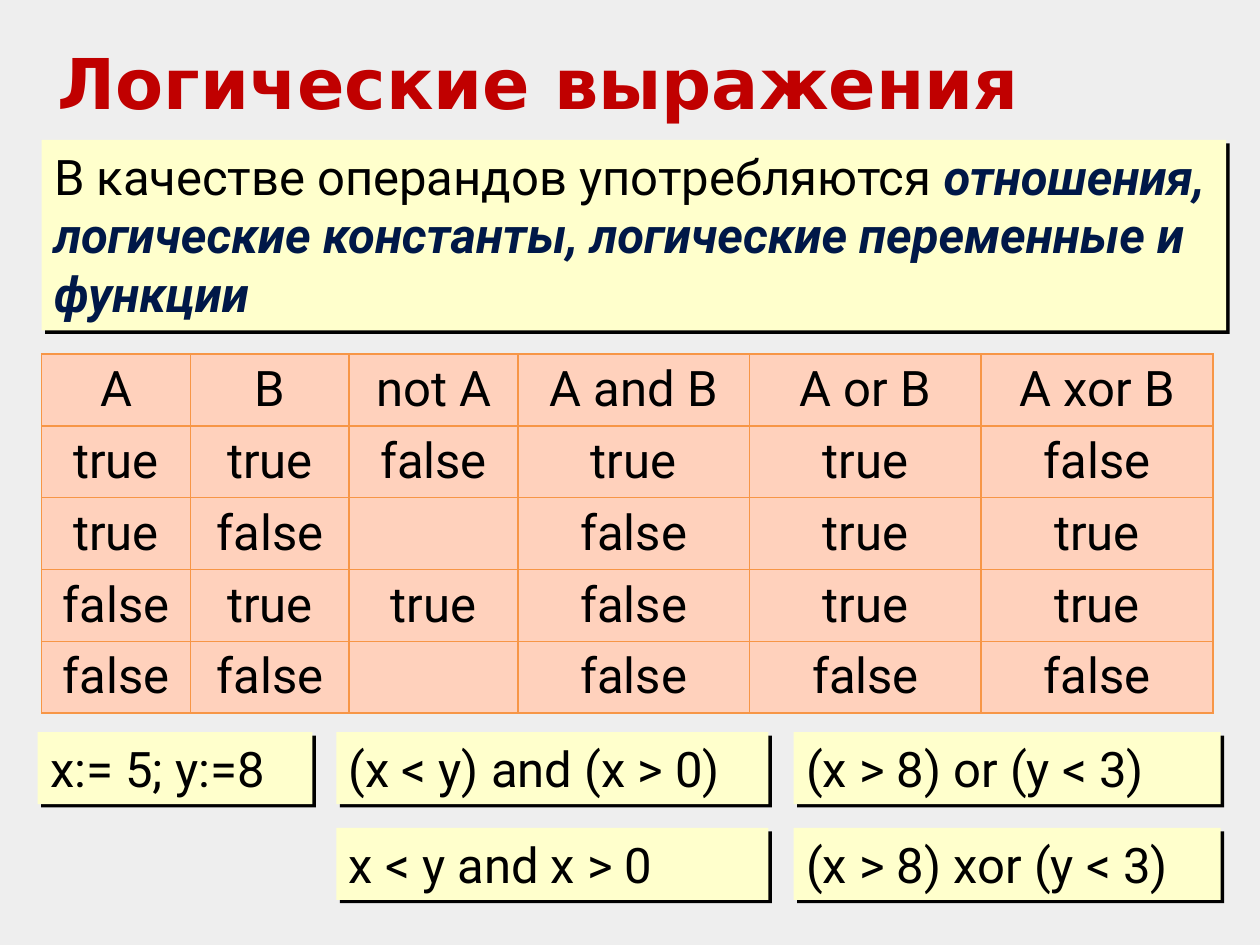
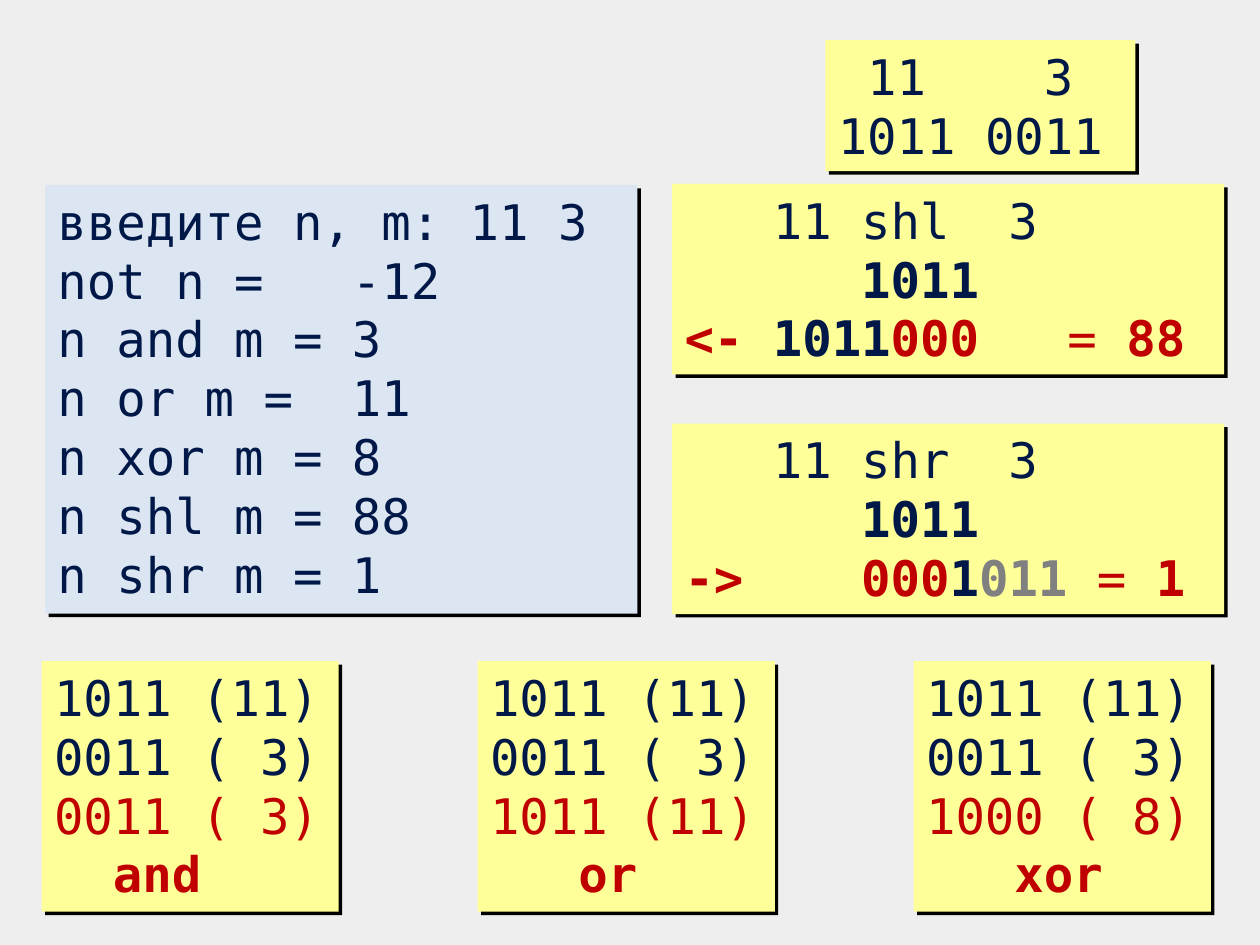
import dataclasses

import pptx
import pptx.dml.color
import pptx.enum.shapes
import pptx.enum.text
import pptx.oxml
import pptx.oxml.ns
import pptx.util

Cm = pptx.util.Cm
Pt = pptx.util.Pt
ALIGN = pptx.enum.text.PP_ALIGN
ANCHOR = pptx.enum.text.MSO_ANCHOR


@dataclasses.dataclass(frozen=True)
class Theme:
    back: str = "EEEEEE"
    cream: str = "FFFFCC"
    yellow: str = "FFFF99"
    blue: str = "DCE6F2"
    peach: str = "FFD1BC"
    grid: str = "F79646"
    black: str = "000000"
    navy: str = "001848"
    red: str = "C00000"
    gray: str = "808080"
    body: str = "Roboto"
    code: str = "DejaVu Sans Mono"
    head: str = "DejaVu Sans"
    text_size: int = 28
    head_size: int = 40


T = Theme()

# Looks of text: colour, bold, italic
PLAIN = (T.black, False, False)
TERM = (T.navy, True, True)
INK = (T.navy, False, False)
BOLD = (T.navy, True, False)
RED = (T.red, False, False)
MARK = (T.red, True, False)
LOST = (T.gray, True, False)

# ---- Content: a line is a list of (text, look) runs ----
TITLE = "Логические выражения"
RULE = [[("В качестве операндов употребляются ", PLAIN),
         ("отношения, логические константы, логические переменные и функции", TERM)]]
TRUTH = [
    ("A", "B", "not A", "A and B", "A or B", "A xor B"),
    ("true", "true", "false", "true", "true", "false"),
    ("true", "false", "", "false", "true", "true"),
    ("false", "true", "true", "false", "true", "true"),
    ("false", "false", "", "false", "false", "false"),
]
WIDTHS = (3.0, 3.2, 3.4, 4.67, 4.67, 4.67)

# Samples: column, row, text
SAMPLES = [
    (0, 0, "x:= 5; y:=8"),
    (1, 0, "(x < y) and (x > 0)"),
    (2, 0, "(x > 8) or (y < 3)"),
    (1, 1, "x < y and x > 0"),
    (2, 1, "(x > 8) xor (y < 3)"),
]
COLUMNS = [(0.76, 5.54), (6.78, 8.71), (16.0, 8.61)]  # left, width

OUTPUT = [[(line, INK)] for line in (
    "введите n, m: 11 3",
    "not n =   -12",
    "n and m = 3",
    "n or m =  11",
    "n xor m = 8",
    "n shl m = 88",
    "n shr m = 1",
)]
INPUT = [[(" 11    3", INK)], [("1011 0011", INK)]]
SHIFTS = [
    [[("   11 shl  3", INK)],
     [("      1011", BOLD)],
     [("<- ", MARK), ("1011", BOLD), ("000   ", MARK), ("= ", RED), ("88", MARK)]],
    [[("   11 shr  3", INK)],
     [("      1011", BOLD)],
     [("->    000", MARK), ("1", BOLD), ("011 ", LOST), ("= ", RED), ("1", MARK)]],
]
BITWISE = [("0011 ( 3)", "  and"), ("1011 (11)", "   or"), ("1000 ( 8)", "   xor")]


# ---- Drawing ----
def rgb(code):
    return pptx.dml.color.RGBColor.from_string(code)


def style(font, look, face, size=T.text_size):
    color, font.bold, font.italic = look
    font.color.rgb = rgb(color)
    font.name, font.size = face, Pt(size)


def write(frame, lines, face):
    for num, line in enumerate(lines):
        para = frame.paragraphs[0] if num == 0 else frame.add_paragraph()
        para.alignment = ALIGN.LEFT
        style(para.font, line[0][1], face)
        for text, look in line:
            run = para.add_run()
            run.text = text
            if len(line) > 1:
                style(run.font, look, face)


def cast(shape):
    """Give the shape a hard black shadow down and to the right."""
    shape.shadow.inherit = False
    effects = shape._element.spPr.find(pptx.oxml.ns.qn("a:effectLst"))
    effects.append(pptx.oxml.parse_xml(
        f'<a:outerShdw {pptx.oxml.ns.nsdecls("a")} dist="{Pt(2.8)}" dir="2700000" '
        f'algn="ctr" rotWithShape="0"><a:srgbClr val="{T.black}"/></a:outerShdw>'))


def panel(slide, left, top, width, height, fill, lines, face=T.code):
    box = slide.shapes.add_shape(pptx.enum.shapes.MSO_SHAPE.RECTANGLE,
                                 Cm(left), Cm(top), Cm(width), Cm(height))
    box.fill.solid()
    box.fill.fore_color.rgb = rgb(fill)
    box.line.fill.background()
    cast(box)
    frame = box.text_frame
    frame.word_wrap = True
    frame.auto_size = pptx.enum.text.MSO_AUTO_SIZE.SHAPE_TO_FIT_TEXT
    frame.vertical_anchor = ANCHOR.TOP
    write(frame, lines, face)


def border(cell):
    props = cell._tc.get_or_add_tcPr()
    for num, side in enumerate(("lnL", "lnR", "lnT", "lnB")):
        props.insert(num, pptx.oxml.parse_xml(
            f'<a:{side} {pptx.oxml.ns.nsdecls("a")} w="{Pt(1)}"><a:solidFill>'
            f'<a:srgbClr val="{T.grid}"/></a:solidFill></a:{side}>'))


def grid(slide, left, top, rows, widths, height):
    table = slide.shapes.add_table(len(rows), len(widths), Cm(left), Cm(top),
                                   Cm(sum(widths)), Cm(height * len(rows))).table
    table.first_row = table.horz_banding = False
    for col, width in zip(table.columns, widths):
        col.width = Cm(width)
    for row, texts in zip(table.rows, rows):
        row.height = Cm(height)
        for cell, text in zip(row.cells, texts):
            cell.text = text
            cell.vertical_anchor = ANCHOR.MIDDLE
            cell.margin_left = cell.margin_right = Cm(0.13)
            cell.margin_top = cell.margin_bottom = Cm(0.13)
            cell.fill.solid()
            cell.fill.fore_color.rgb = rgb(T.peach)
            border(cell)
            para = cell.text_frame.paragraphs[0]
            para.alignment = ALIGN.CENTER
            style(para.font, PLAIN, T.body)


def head(slide, text):
    title = slide.shapes.title
    title.left, title.top = Cm(0.91), Cm(0.53)
    title.width, title.height = Cm(23.57), Cm(2.21)
    frame = title.text_frame
    frame.text = text
    frame.vertical_anchor = ANCHOR.MIDDLE
    para = frame.paragraphs[0]
    para.alignment = ALIGN.LEFT
    style(para.font, MARK, T.head, T.head_size)


def logic(slide):
    head(slide, TITLE)
    panel(slide, 0.84, 2.82, 23.88, 3.84, T.cream, RULE, T.body)
    grid(slide, 0.84, 7.14, TRUTH, WIDTHS, 1.44)
    for col, row, text in SAMPLES:
        left, width = COLUMNS[col]
        panel(slide, left, 14.76 + 1.93 * row, width, 1.45, T.cream,
              [[(text, PLAIN)]], T.body)


def bits(slide):
    panel(slide, 0.91, 3.73, 11.94, 8.64, T.blue, OUTPUT)
    panel(slide, 16.64, 0.81, 6.25, 2.64, T.yellow, INPUT)
    for num, lines in enumerate(SHIFTS):
        panel(slide, 13.55, 3.71 + 4.83 * num, 11.13, 3.84, T.yellow, lines)
    for num, (result, name) in enumerate(BITWISE):
        lines = [[("1011 (11)", INK)], [("0011 ( 3)", INK)],
                 [(result, RED)], [(name, MARK)]]
        panel(slide, 0.84 + 8.79 * num, 13.33, 5.99, 5.05, T.yellow, lines)


def main():
    deck = pptx.Presentation()
    deck.slide_width, deck.slide_height = Cm(25.4), Cm(19.05)
    back = deck.slide_master.background.fill
    back.solid()
    back.fore_color.rgb = rgb(T.back)
    only_title, blank = deck.slide_layouts[5], deck.slide_layouts[6]
    logic(deck.slides.add_slide(only_title))
    bits(deck.slides.add_slide(blank))
    deck.save("out.pptx")


if __name__ == "__main__":
    main()
